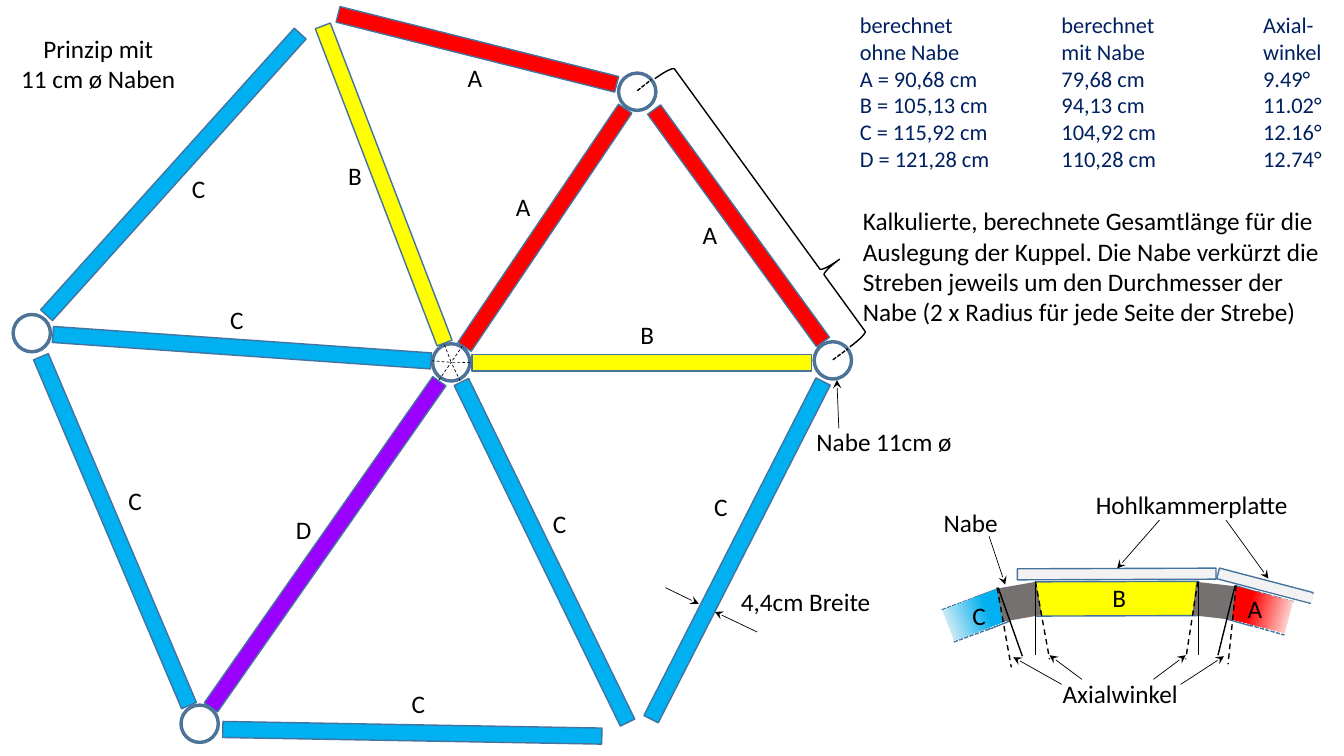
from lxml import etree
from pptx import Presentation
from pptx.dml.color import RGBColor
from pptx.enum.dml import MSO_LINE
from pptx.enum.shapes import MSO_CONNECTOR, MSO_SHAPE
from pptx.enum.text import MSO_ANCHOR, MSO_AUTO_SIZE, PP_ALIGN
from pptx.oxml.ns import qn
from pptx.util import Inches, Pt

# All positions count cells of a grid, 133.3 columns by 75 rows.
CELL = Inches(0.1)
COLUMNS, ROWS = 133.3, 75

BLACK = RGBColor(0x00, 0x00, 0x00)
WHITE = RGBColor(0xFF, 0xFF, 0xFF)
NAVY = RGBColor(0x00, 0x20, 0x60)
STEEL = RGBColor(0x43, 0x73, 0x9E)
GREY = RGBColor(0x76, 0x71, 0x71)
PALE = RGBColor(0xF2, 0xF2, 0xF2)
CREAM = RGBColor(0xFE, 0xF8, 0xF5)
RED = RGBColor(0xFF, 0x00, 0x00)
YELLOW = RGBColor(0xFF, 0xFF, 0x00)
BLUE = RGBColor(0x00, 0xB0, 0xF0)
PURPLE = RGBColor(0x99, 0x00, 0xFF)

RECTANGLE, ELLIPSE, BRACE = MSO_SHAPE.RECTANGLE, MSO_SHAPE.OVAL, MSO_SHAPE.RIGHT_BRACE
STRAIGHT = MSO_CONNECTOR.STRAIGHT
DASH, SHORT_DASH = MSO_LINE.DASH, MSO_LINE.SQUARE_DOT
LEFT, CENTER = PP_ALIGN.LEFT, PP_ALIGN.CENTER
TOP, MIDDLE = MSO_ANCHOR.TOP, MSO_ANCHOR.MIDDLE
FIT_SHAPE = MSO_AUTO_SIZE.SHAPE_TO_FIT_TEXT

STRUT_WIDTH = 1.6
STRUT_KINDS = {"A": (28.5, RED), "B": (33.7, YELLOW), "C": (37.6, BLUE), "D": (39.5, PURPLE)}
# Kind, centre of the strut, rotation, centre of its letter
STRUTS = [
    ("A", 54.05, 22.6, 304, 51.9, 20.5),
    ("B", 63.65, 36, 0, 64.2, 33.2),
    ("C", 54, 54.8, 64, 55.5, 51.9),
    ("D", 32.25, 54, 305, 30.1, 52.5),
    ("B", 38.05, 18.3, 69, 35.2, 17.4),
    ("C", 24, 34.5, 4, 23.5, 31.7),
    ("A", 73.25, 22.4, 54, 70.4, 23.3),
    ("A", 47.35, 4.9, 14.1, 47.1, 7.7),
    ("C", 73.1, 54.6, 117, 71.5, 50.3),
    ("C", 17.2, 17.3, 312, 19.7, 18.7),
    ("C", 11.4, 52.7, 67, 13.4, 49.7),
    ("C", 40.9, 72.7, 1, 41.5, 69.8),
]
CENTRE_HUB = (44.75, 35.95)
HUBS = [CENTRE_HUB, (82.6, 35.75), (63.2, 9.1), (19.8, 71.8), (3.15, 33.05)]
SPOKE_ENDS = [(38.8, 20.3), (54.6, 21.6), (64, 36), (52.1, 51.2), (35.6, 49.1), (25.5, 34.4)]

LENGTH_ROWS = [
    ("berechnet", "berechnet", "Axial-"),
    ("ohne Nabe", "mit Nabe", "winkel"),
    ("A = 90,68 cm", "79,68 cm", "9.49°"),
    ("B = 105,13 cm", "94,13 cm", "11.02°"),
    ("C = 115,92 cm", "104,92 cm", "12.16°"),
    ("D = 121,28 cm", "110,28 cm", "12.74°"),
]

# Cut through the dome: start x, start y, end x, end y
SECTION_EDGES = [
    (100.2, 61.6, 99, 58.4), (100.2, 61.6, 97.9, 62.5), (99, 58.4, 96.6, 59.3),
    (122.5, 58.1, 121.7, 61.4), (122.5, 58.1, 124.9, 58.8), (121.6, 61.4, 124.1, 62.1),
]
SECTION_DASHES = [
    (98.1, 62.4, 94.6, 63.7), (96.9, 59.2, 93.4, 60.5),
    (124.7, 58.7, 128.3, 59.7), (123.9, 62, 127.4, 63),
]
HUB_AXES = [
    (118.9, 57.7, 118.9, 65), (102.7, 57.7, 102.7, 65),
    (122.5, 58.1, 120.8, 65), (99, 58.3, 101.4, 65.1),
]
STRUT_AXES = [
    (102.7, 57.7, 104.1, 65.4), (118.8, 57.7, 117.6, 65.4),
    (98.9, 58.3, 100.3, 66.2), (122.6, 58.1, 121.8, 65.9),
]
ARROWS = [
    (83.2, 42.5, 83, 37.7), (75.1, 62.7, 70.9, 60.7), (66, 58.3, 69.3, 59.9),
    (107.3, 67.4, 104.1, 65), (114.4, 67.4, 117.6, 65),
    (105.3, 67.9, 100.5, 65.2), (117.1, 67.9, 121.4, 65.1),
    (98.1, 53.2, 99.7, 58), (115, 51.6, 110.8, 56.4), (121.6, 51.6, 125.8, 57.4),
]
CAPTIONS = [
    (80, 41.8, 16.7, "Nabe 11cm ø"), (72.5, 57.7, 15, "4,4cm Breite"),
    (104.4, 66.8, 13.5, "Axialwinkel"), (92.6, 49.8, 7.5, "Nabe"),
    (107.7, 48.1, 21.3, "Hohlkammerplatte"),
]
SECTION_LETTERS = [("B", 111, 59.3), ("C", 97.1, 61.1), ("A", 124.45, 60.4)]


def cells(count):
    return round(count * CELL)


def add_block(slide, kind, center_x, center_y, width, height, rotation=0, fill=None, line=STEEL):
    """Draw a preset shape around its centre."""
    shape = slide.shapes.add_shape(kind, cells(center_x - width / 2), cells(center_y - height / 2),
                                   cells(width), cells(height))
    shape.shadow.inherit = False
    shape.rotation = rotation
    if fill is None:
        shape.fill.background()
    else:
        shape.fill.solid()
        shape.fill.fore_color.rgb = fill
    if line is None:
        shape.line.fill.background()
    else:
        shape.line.color.rgb = line
        shape.line.width = Pt(1)
    return shape


def add_fading_block(slide, center_x, center_y, rotation, color):
    shape = add_block(slide, RECTANGLE, center_x, center_y, 3.2, 5.8, rotation, line=None)
    shape.fill.gradient()
    shape.fill.gradient_angle = 270
    for stop, position, stop_color in zip(shape.fill.gradient_stops, (0, 0.66), (CREAM, color)):
        stop.position = position
        stop.color.rgb = stop_color


def add_hub(slide, center_x, center_y):
    for diameter, fill in ((3.9, GREY), (3.5, WHITE)):
        add_block(slide, ELLIPSE, center_x, center_y, diameter, diameter, fill=fill)


def add_line(slide, ends, color=BLACK, width=1, dash=None, arrow=False):
    connector = slide.shapes.add_connector(STRAIGHT, *map(cells, ends))
    connector.line.color.rgb = color
    connector.line.width = Pt(width)
    if dash is not None:
        connector.line.dash_style = dash
    if arrow:
        etree.SubElement(connector.line._get_or_add_ln(), qn("a:tailEnd"), type="stealth")
    etree.SubElement(connector._element.spPr, qn("a:effectLst"))


def add_text(slide, left, top, width, height, lines, align=LEFT, size=18, color=BLACK,
             wrap=True, anchor=TOP, tab_stops=()):
    box = slide.shapes.add_textbox(cells(left), cells(top), cells(width), cells(height))
    frame = box.text_frame
    frame.word_wrap = wrap
    frame.vertical_anchor = anchor
    if anchor == TOP:
        frame.auto_size = FIT_SHAPE
    for index, line in enumerate(lines):
        paragraph = frame.add_paragraph() if index else frame.paragraphs[0]
        paragraph.alignment = align
        if tab_stops:
            tab_list = etree.SubElement(paragraph._p.get_or_add_pPr(), qn("a:tabLst"))
            for stop in tab_stops:
                etree.SubElement(tab_list, qn("a:tab"), pos=str(cells(stop)), algn="l")
        run = paragraph.add_run()
        run.text = line
        run.font.name = "Calibri"
        run.font.size = Pt(size)
        run.font.color.rgb = color


def add_letter(slide, letter, center_x, center_y):
    add_text(slide, center_x - 1.75, center_y - 2, 3.5, 4, [letter], CENTER)


def add_dome(slide):
    for hub in HUBS:
        add_hub(slide, *hub)
    for end in SPOKE_ENDS:
        add_line(slide, end + CENTRE_HUB, width=0.5, dash=DASH)
    for kind, center_x, center_y, rotation, letter_x, letter_y in STRUTS:
        length, color = STRUT_KINDS[kind]
        add_block(slide, RECTANGLE, center_x, center_y, length, STRUT_WIDTH, rotation, color)
        add_letter(slide, kind, letter_x, letter_y)
    brace = add_block(slide, BRACE, 76.35, 19.85, 4.3, 32.9, 324, line=BLACK)
    brace.adjustments[0], brace.adjustments[1] = 0.083, 0.768
    for ends in ((63.2, 9, 64.6, 7.9), (82.6, 35.7, 84.1, 34.6)):
        add_line(slide, ends, dash=SHORT_DASH)


def add_section(slide):
    for ends in SECTION_EDGES:
        add_line(slide, ends, STEEL)
    for ends in SECTION_DASHES:
        add_line(slide, ends, STEEL, dash=SHORT_DASH)
    add_fading_block(slide, 96.8, 61, 248.9, BLUE)
    add_fading_block(slide, 125, 60.5, 104.7, RED)
    add_block(slide, RECTANGLE, 110.75, 56.95, 1.1, 19.7, 89.8, PALE)
    add_block(slide, RECTANGLE, 110.8, 59.4, 3.4, 16.2, 89.8, YELLOW)
    for center_x, center_y, rotation in ((101.1, 59.7, 80.1), (120.4, 59.6, 96.5)):
        add_block(slide, RECTANGLE, center_x, center_y, 3.2, 3.8, rotation, GREY, GREY)
    for ends in HUB_AXES:
        add_line(slide, ends)
    for ends in STRUT_AXES:
        add_line(slide, ends, dash=DASH)
    for letter in SECTION_LETTERS:
        add_letter(slide, *letter)
    add_block(slide, RECTANGLE, 125.45, 58.1, 1.1, 9.6, 104.7, PALE)
    add_block(slide, RECTANGLE, 127.45, 58.65, 0.9, 5.7, 104.7, PALE, None)


def main():
    presentation = Presentation()
    presentation.slide_width, presentation.slide_height = cells(COLUMNS), cells(ROWS)
    slide = presentation.slides.add_slide(presentation.slide_layouts[6])
    add_text(slide, 84.3, 0.6, 48.6, 17.2, ["\t".join(row) for row in LENGTH_ROWS],
             size=16, color=NAVY, tab_stops=(20, 40))
    add_dome(slide)
    add_text(slide, 1, 2.8, 17.5, 7.1, ["Prinzip mit", "11 cm ø Naben"], CENTER, wrap=False)
    add_text(slide, 84.6, 19.9, 47.8, 13, [
        "Kalkulierte, berechnete Gesamtlänge für die Auslegung der Kuppel. "
        "Die Nabe verkürzt die Streben jeweils um den Durchmesser der Nabe "
        "(2 x Radius für jede Seite der Strebe)"], anchor=MIDDLE)
    add_section(slide)
    for left, top, width, caption in CAPTIONS:
        add_text(slide, left, top, width, 4, [caption], wrap=False)
    for ends in ARROWS:
        add_line(slide, ends, width=0.5, arrow=True)
    presentation.save("out.pptx")


if __name__ == "__main__":
    main()
